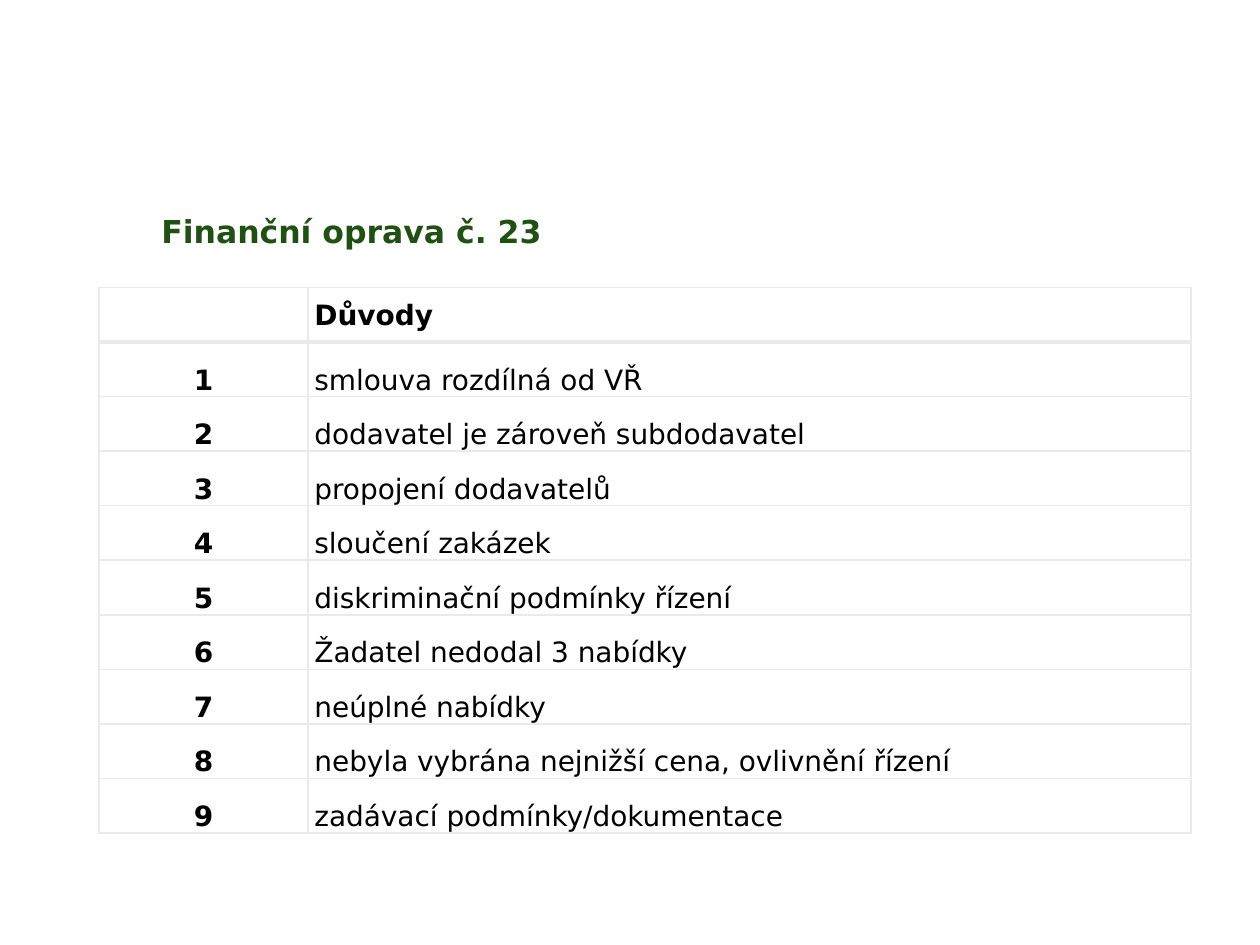
"""Build a slide that lists the reasons for financial correction no. 23."""
from dataclasses import dataclass

from lxml import etree
from pptx import Presentation
from pptx.dml.color import RGBColor
from pptx.enum.text import MSO_ANCHOR, MSO_AUTO_SIZE, PP_ALIGN
from pptx.oxml.ns import qn
from pptx.util import Pt

LEFT, CENTER = PP_ALIGN.LEFT, PP_ALIGN.CENTER
MIDDLE, BOTTOM = MSO_ANCHOR.MIDDLE, MSO_ANCHOR.BOTTOM
FIT_SHAPE = MSO_AUTO_SIZE.SHAPE_TO_FIT_TEXT
TITLE_ONLY = 5


@dataclass(frozen=True)
class Theme:
    font: str = "DejaVu Sans"
    title_size: int = 18
    table_size: int = 16
    title: str = "215112"
    text: str = "000000"
    paper: str = "FFFFFF"
    border: str = "EAEAEA"


theme = Theme()


def write(frame, text, size=theme.table_size, color=theme.text, bold=False, align=LEFT, spacing=None):
    """Write one formatted paragraph into a text frame."""
    para = frame.paragraphs[0]
    para.alignment = align
    para.line_spacing = spacing
    span = para.add_run()
    span.text = text
    span.font.name = theme.font
    span.font.size = Pt(size)
    span.font.bold = bold
    span.font.color.rgb = RGBColor.from_string(color)


def style_cell(cell, anchor, bottom_width):
    """Set the margins, borders and fill of a table cell."""
    cell.margin_left = cell.margin_right = Pt(3.6)
    cell.margin_top = cell.margin_bottom = 0
    cell.vertical_anchor = anchor
    properties = cell._tc.get_or_add_tcPr()
    for side, width in (("L", 1), ("R", 1), ("T", 1), ("B", bottom_width)):
        line = etree.SubElement(properties, qn(f"a:ln{side}"), w=str(Pt(width)))
        fill = etree.SubElement(line, qn("a:solidFill"))
        etree.SubElement(fill, qn("a:srgbClr"), val=theme.border)
    cell.fill.solid()
    cell.fill.fore_color.rgb = RGBColor.from_string(theme.paper)


reasons = [
    "smlouva rozdílná od VŘ",
    "dodavatel je zároveň subdodavatel",
    "propojení dodavatelů",
    "sloučení zakázek",
    "diskriminační podmínky řízení",
    "Žadatel nedodal 3 nabídky",
    "neúplné nabídky",
    "nebyla vybrána nejnižší cena, ovlivnění řízení",
    "zadávací podmínky/dokumentace",
]

deck = Presentation()
deck.slide_width, deck.slide_height = Pt(720), Pt(540)
page = deck.slides.add_slide(deck.slide_layouts[TITLE_ONLY])

title = page.shapes.title
title.left, title.top, title.width, title.height = Pt(82), Pt(113.8), Pt(238.5), Pt(35.5)
frame = title.text_frame
frame.margin_left = frame.margin_right = Pt(10.2)
frame.margin_top = frame.margin_bottom = Pt(6.8)
frame.vertical_anchor = BOTTOM
frame.word_wrap = False
frame.auto_size = FIT_SHAPE
write(frame, "Finanční oprava č. 23", size=theme.title_size, color=theme.title, bold=True)

row_height = 31.2
rows = [("", "Důvody")] + [(str(number), reason) for number, reason in enumerate(reasons, 1)]
table = page.shapes.add_table(
    len(rows), 2, Pt(56.7), Pt(164.2), Pt(623.8), Pt(row_height * len(rows))
).table
table.columns[0].width = Pt(119.4)
table.columns[1].width = Pt(504.4)

for row_index, row in enumerate(rows):
    table.rows[row_index].height = Pt(row_height)
    is_header = row_index == 0
    for column_index, text in enumerate(row):
        cell = table.cell(row_index, column_index)
        style_cell(cell, MIDDLE if is_header else BOTTOM, 3 if is_header else 1)
        if is_header and column_index:
            for side_line in cell._tc.tcPr.findall(qn("a:lnB")):
                side_line.set("w", str(Pt(3)))
        if row_index == 1:
            cell._tc.tcPr.find(qn("a:lnT")).set("w", str(Pt(3)))
        if text:
            is_number = column_index == 0
            write(
                cell.text_frame,
                text,
                bold=is_header or is_number,
                align=CENTER if is_number else LEFT,
                spacing=1.07,
            )

deck.save("out.pptx")
